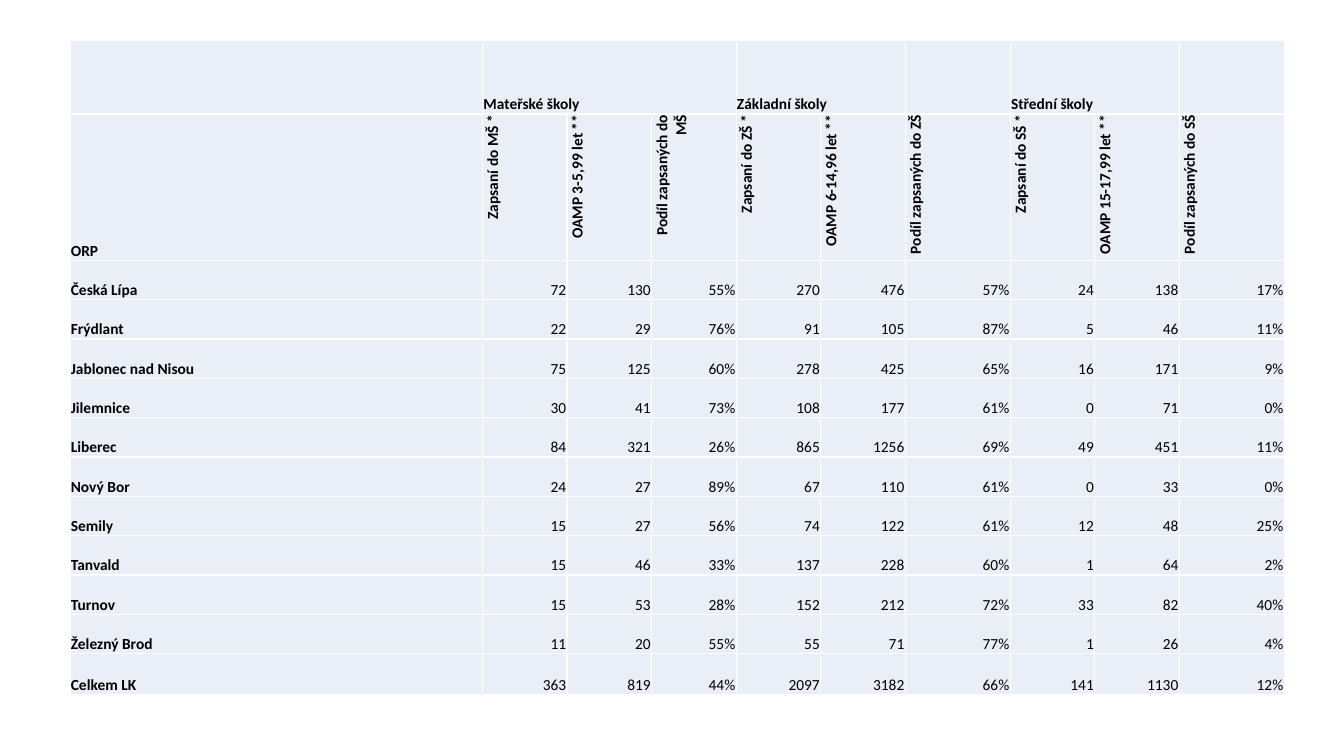
import pptx
import pptx.dml.color
import pptx.enum.text
import pptx.oxml
import pptx.util

# Content: school groups as (first column, columns spanned, name)
GROUPS = [(1, 3, "Mateřské školy"), (4, 2, "Základní školy"), (7, 2, "Střední školy")]
HEADINGS = [
    "ORP",
    "Zapsaní do MŠ *", "OAMP 3-5,99 let **", "Podíl zapsaných do MŠ",
    "Zapsaní do ZŠ *", "OAMP 6-14,96 let **", "Podíl zapsaných do ZŠ",
    "Zapsaní do SŠ *", "OAMP 15-17,99 let **", "Podíl zapsaných do SŠ",
]
DISTRICTS = [
    ("Česká Lípa", "72", "130", "55%", "270", "476", "57%", "24", "138", "17%"),
    ("Frýdlant", "22", "29", "76%", "91", "105", "87%", "5", "46", "11%"),
    ("Jablonec nad Nisou", "75", "125", "60%", "278", "425", "65%", "16", "171", "9%"),
    ("Jilemnice", "30", "41", "73%", "108", "177", "61%", "0", "71", "0%"),
    ("Liberec", "84", "321", "26%", "865", "1256", "69%", "49", "451", "11%"),
    ("Nový Bor", "24", "27", "89%", "67", "110", "61%", "0", "33", "0%"),
    ("Semily", "15", "27", "56%", "74", "122", "61%", "12", "48", "25%"),
    ("Tanvald", "15", "46", "33%", "137", "228", "60%", "1", "64", "2%"),
    ("Turnov", "15", "53", "28%", "152", "212", "72%", "33", "82", "40%"),
    ("Železný Brod", "11", "20", "55%", "55", "71", "77%", "1", "26", "4%"),
    ("Celkem LK", "363", "819", "44%", "2097", "3182", "66%", "141", "1130", "12%"),
]

# Layout and format, in points
PAGE_SIZE = (960, 540)
TABLE_LEFT, TABLE_TOP = 50, 29
NAME_WIDTH, COUNT_WIDTH, SHARE_WIDTH = 294.7, 60.4, 75
COLUMN_WIDTHS = [NAME_WIDTH] + [COUNT_WIDTH] * 5 + [SHARE_WIDTH] + [COUNT_WIDTH] * 2 + [SHARE_WIDTH]
ROW_HEIGHTS = [52.4, 95.8] + [28.1] * (len(DISTRICTS) - 1) + [29.4]
CELL_MARGIN = 0.6
FONT, FONT_SIZE = "Calibri", 11
TEXT, CELL_FILL, BORDER = "000000", "EAEFF7", "FFFFFF"

Pt = pptx.util.Pt
ALIGN = pptx.enum.text.PP_ALIGN


def color(value):
    return pptx.dml.color.RGBColor.from_string(value)


def style_cell(cell):
    properties = cell._tc.get_or_add_tcPr()
    for side in ("lnL", "lnR", "lnT", "lnB"):
        properties.append(pptx.oxml.parse_xml(
            f'<a:{side} xmlns:a="http://schemas.openxmlformats.org/drawingml/2006/main" w="{Pt(1)}">'
            f'<a:solidFill><a:srgbClr val="{BORDER}"/></a:solidFill></a:{side}>'))
    cell.fill.solid()
    cell.fill.fore_color.rgb = color(CELL_FILL)
    cell.margin_left = cell.margin_right = cell.margin_top = Pt(CELL_MARGIN)
    cell.margin_bottom = 0
    cell.vertical_anchor = pptx.enum.text.MSO_ANCHOR.BOTTOM


def write(cell, text, bold=True, align=ALIGN.LEFT, vertical=False):
    para = cell.text_frame.paragraphs[0]
    para.alignment = align
    span = para.add_run()
    span.text = text
    span.font.name = FONT
    span.font.size = Pt(FONT_SIZE)
    span.font.bold = bold
    span.font.color.rgb = color(TEXT)
    if vertical:
        cell._tc.get_or_add_tcPr().set("vert", "vert270")


# Page
deck = pptx.Presentation()
deck.slide_width, deck.slide_height = map(Pt, PAGE_SIZE)
page = deck.slides.add_slide(deck.slide_layouts[6])

# Table grid
table = page.shapes.add_table(
    len(ROW_HEIGHTS), len(COLUMN_WIDTHS), Pt(TABLE_LEFT), Pt(TABLE_TOP),
    Pt(sum(COLUMN_WIDTHS)), Pt(sum(ROW_HEIGHTS))).table
table.first_row = table.horz_banding = False
for column, width in zip(table.columns, COLUMN_WIDTHS):
    column.width = Pt(width)
for row, height in zip(table.rows, ROW_HEIGHTS):
    row.height = Pt(height)
for cell in table.iter_cells():
    style_cell(cell)

# School groups
for first, count, name in GROUPS:
    table.cell(0, first).merge(table.cell(0, first + count - 1))
    write(table.cell(0, first), name)

# Column headings
for index, heading in enumerate(HEADINGS):
    turned = index > 0
    write(table.cell(1, index), heading, vertical=turned,
          align=ALIGN.RIGHT if turned else ALIGN.LEFT)

# Districts and total
for row_index, (district, *values) in enumerate(DISTRICTS, start=2):
    write(table.cell(row_index, 0), district)
    for column_index, value in enumerate(values, start=1):
        write(table.cell(row_index, column_index), value, bold=False, align=ALIGN.RIGHT)

deck.save("out.pptx")
